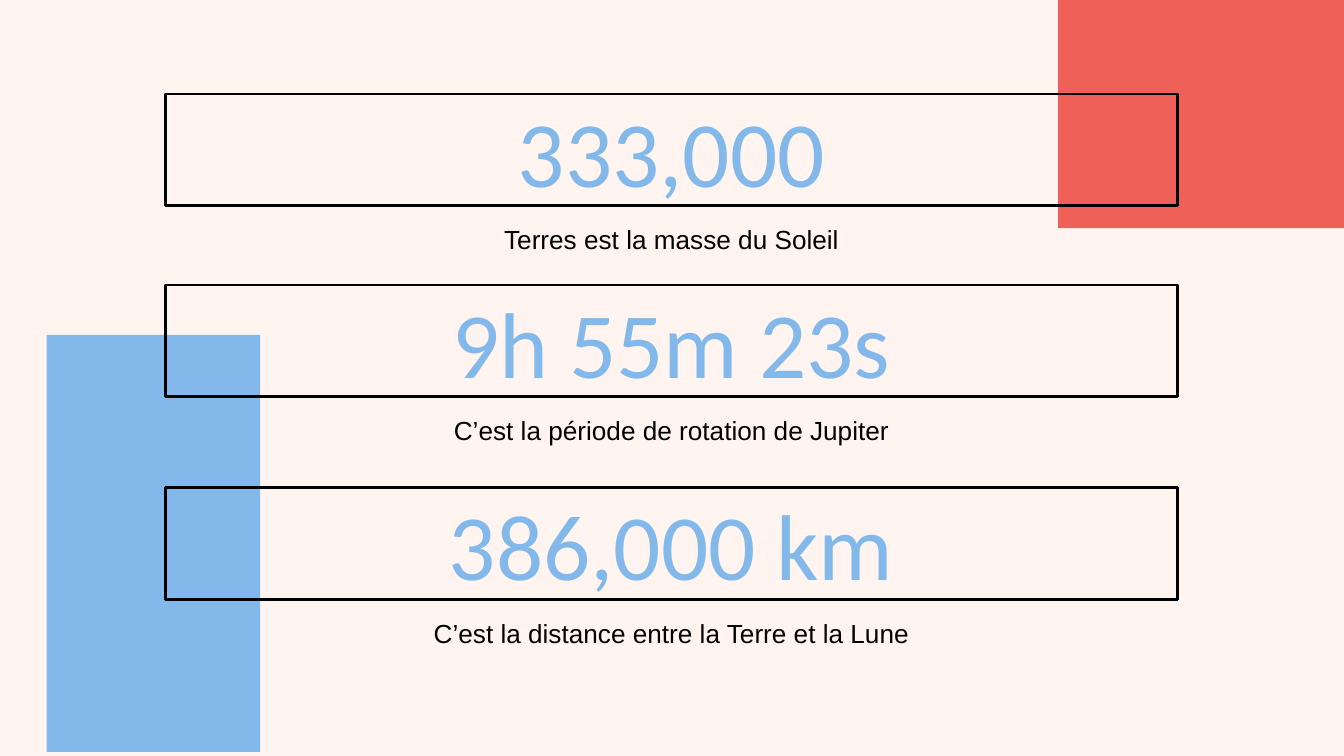
from lxml.etree import SubElement
from pptx import Presentation
from pptx.dml.color import RGBColor
from pptx.enum.shapes import MSO_SHAPE
from pptx.enum.text import MSO_ANCHOR, MSO_AUTO_SIZE, PP_ALIGN
from pptx.oxml.ns import qn
from pptx.util import Pt

COLORS = {
    "background": "FFF4EF",
    "coral": "EF6058",
    "blue": "83B9EA",
    "black": "000000",
}
FACTS = [
    ("333,000", "Terres est la masse du Soleil", 50.4),
    ("9h 55m 23s", "C’est la période de rotation de Jupiter", 152.7),
    ("386,000 km", "C’est la distance entre la Terre et la Lune", 261.2),
]
COMPARISON_LAYOUT = 4


def color(name):
    return RGBColor.from_string(COLORS[name])


def place(shape, left, top, width, height):
    shape.left, shape.top = Pt(left), Pt(top)
    shape.width, shape.height = Pt(width), Pt(height)


def write(shape, text, *, size, font_name, font_color):
    """Put one centred, unbulleted paragraph in the middle of the shape."""
    frame = shape.text_frame
    frame.text = text
    frame.word_wrap = True
    frame.auto_size = MSO_AUTO_SIZE.NONE
    frame.vertical_anchor = MSO_ANCHOR.MIDDLE
    frame.margin_left = frame.margin_right = Pt(7.2)
    frame.margin_top = frame.margin_bottom = Pt(7.2)
    paragraph = frame.paragraphs[0]
    paragraph.alignment = PP_ALIGN.CENTER
    paragraph.line_spacing = 1.0
    paragraph.space_before = Pt(0)
    properties = paragraph._p.get_or_add_pPr()
    properties.set("marL", "0")
    properties.set("indent", "0")
    SubElement(properties, qn("a:buNone"))
    font = paragraph.runs[0].font
    font.name, font.size, font.bold = font_name, Pt(size), False
    font.color.rgb = color(font_color)


def add_block(slide, fill, *box):
    block = slide.shapes.add_shape(MSO_SHAPE.RECTANGLE, *map(Pt, box))
    block.shadow.inherit = False
    block.fill.solid()
    block.fill.fore_color.rgb = color(fill)
    block.line.fill.background()


def add_fact(number_shape, caption_shape, number, caption, left, top, width):
    """Frame a large number and centre its caption below it."""
    caption_width = 311.8
    place(number_shape, left, top, width, 59.8)
    number_shape.line.color.rgb = color("black")
    number_shape.line.width = Pt(1.5)
    write(number_shape, number, size=50, font_name="Calibri", font_color="blue")
    place(caption_shape, left + (width - caption_width) / 2, top + 58.3,
          caption_width, 38.9)
    write(caption_shape, caption, size=14, font_name="Arial", font_color="black")


def build_slide(presentation):
    slide = presentation.slides.add_slide(
        presentation.slide_layouts[COMPARISON_LAYOUT])
    slide.background.fill.solid()
    slide.background.fill.fore_color.rgb = color("background")

    title, *captions, spare = list(slide.placeholders)
    spare._element.getparent().remove(spare._element)
    add_block(slide, "coral", 566.8, 0, 153.2, 122.2)
    add_block(slide, "blue", 25, 179.4, 114.4, 223.4)
    for shape in (*captions, title):
        slide.shapes._spTree.append(shape._element)

    for index, (number, caption, top) in enumerate(FACTS):
        number_shape = title if index == 0 else slide.shapes.add_textbox(0, 0, 0, 0)
        add_fact(number_shape, captions[index], number, caption, 88.6, top, 542.4)


def main():
    presentation = Presentation()
    presentation.slide_width, presentation.slide_height = Pt(720), Pt(405)
    build_slide(presentation)
    presentation.save("out.pptx")


if __name__ == "__main__":
    main()
